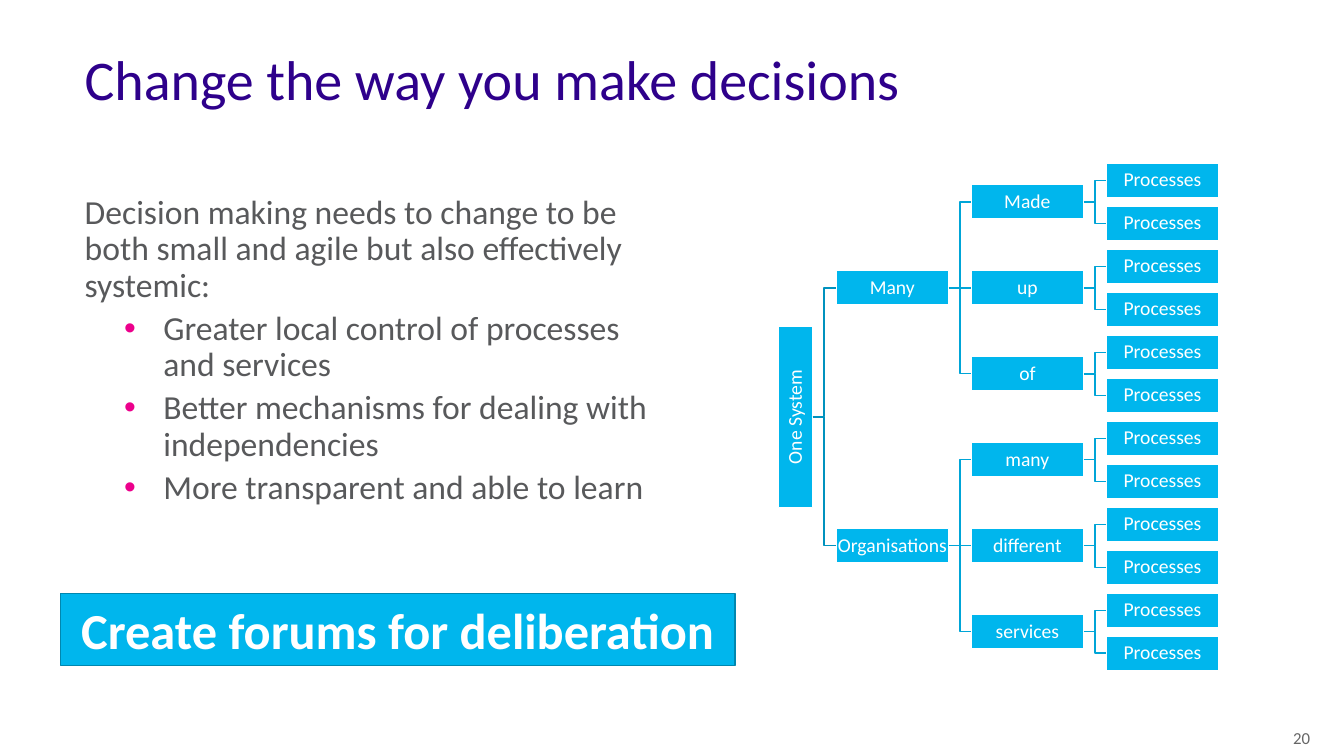
from dataclasses import dataclass
from itertools import count

from lxml.etree import SubElement
from pptx import Presentation
from pptx.dml.color import RGBColor
from pptx.enum.shapes import MSO_CONNECTOR, MSO_SHAPE
from pptx.enum.text import MSO_ANCHOR, PP_ALIGN
from pptx.oxml.ns import qn
from pptx.util import Inches, Pt


@dataclass(frozen=True)
class Theme:
    font: str = "Calibri"
    title: str = "2E008B"
    body: str = "58595B"
    bullet: str = "EC008C"
    number: str = "666666"
    box: str = "00B6ED"
    white: str = "FFFFFF"
    root_link: str = "0092BE"
    link: str = "00A5D7"
    banner_line: str = "0087AF"
    title_size: int = 40
    banner_size: int = 36
    body_size: int = 24
    label_size: int = 14
    number_size: int = 12


THEME = Theme()

BODY_TEXT = "Decision making needs to change to be both small and agile but also effectively systemic:"
BULLETS = [
    "Greater local control of processes and services",
    "Better mechanisms for dealing with independencies",
    "More transparent and able to learn",
]

# Tree: every third-level word has two "Processes" leaves
TREE = {
    "Many": ["Made", "up", "of"],
    "Organisations": ["many", "different", "services"],
}
LEAF = "Processes"
LEAVES_PER_WORD = 2
FIRST_LEAF_Y, LAST_LEAF_Y = 1.79, 6.48
LEAF_COUNT = LEAVES_PER_WORD * sum(len(words) for words in TREE.values())
LEAF_STEP = (LAST_LEAF_Y - FIRST_LEAF_Y) / (LEAF_COUNT - 1)
COLUMN_LEFT, COLUMN_STEP = 8.29, 1.34
BOX_WIDTH, BOX_HEIGHT = 1.12, 0.34
ROOT_WIDTH, ROOT_X = 1.8, 7.89


def write(frame, text, size, color, bold=False, align=PP_ALIGN.LEFT, line_spacing=None,
          before=0, bullet=None, anchor=MSO_ANCHOR.TOP, inset=None, first=True):
    """Put one formatted paragraph into a text frame."""
    if first:
        frame.word_wrap = True
        frame.vertical_anchor = anchor
        if inset is not None:
            frame.margin_left = frame.margin_right = Inches(inset)
            frame.margin_top = frame.margin_bottom = Inches(inset)
    paragraph = frame.paragraphs[0] if first else frame.add_paragraph()
    paragraph.alignment = align
    paragraph.space_before = Pt(before)
    if line_spacing:
        paragraph.line_spacing = line_spacing
    if bullet:
        paragraph.level = 1
        properties = paragraph._p.get_or_add_pPr()
        properties.set("marL", str(Inches(0.78)))
        properties.set("indent", str(Inches(-0.39)))
        bullet_color = SubElement(properties, qn("a:buClr"))
        SubElement(bullet_color, qn("a:srgbClr"), val=bullet)
        SubElement(properties, qn("a:buFont"), typeface="Arial")
        SubElement(properties, qn("a:buChar"), char="•")
    run = paragraph.add_run()
    run.text = text
    run.font.name = THEME.font
    run.font.size = Pt(size)
    run.font.bold = bold
    run.font.color.rgb = RGBColor.from_string(color)


class SlideBuilder:
    def __init__(self, slide, theme):
        self.slide = slide
        self.theme = theme

    def text_box(self, left, top, width, height):
        box = self.slide.shapes.add_textbox(
            Inches(left), Inches(top), Inches(width), Inches(height))
        return box.text_frame

    def rectangle(self, left, top, width, height, line):
        shape = self.slide.shapes.add_shape(
            MSO_SHAPE.RECTANGLE, Inches(left), Inches(top), Inches(width), Inches(height))
        shape.shadow.inherit = False
        shape.fill.solid()
        shape.fill.fore_color.rgb = RGBColor.from_string(self.theme.box)
        self.outline(shape, line)
        return shape

    def outline(self, shape, color):
        shape.line.color.rgb = RGBColor.from_string(color)
        shape.line.width = Pt(1)

    def node(self, text, center_x, center_y, width=BOX_WIDTH, rotation=0):
        shape = self.rectangle(center_x - width / 2, center_y - BOX_HEIGHT / 2,
                               width, BOX_HEIGHT, self.theme.white)
        shape.rotation = rotation
        write(shape.text_frame, text, self.theme.label_size, self.theme.white,
              align=PP_ALIGN.CENTER, line_spacing=0.9, anchor=MSO_ANCHOR.MIDDLE, inset=0.01)
        return shape

    def straight_link(self, parent, child, color):
        connector = self.slide.shapes.add_connector(MSO_CONNECTOR.STRAIGHT, 0, 0, 0, 0)
        connector.begin_connect(parent, 3)
        connector.end_connect(child, 1)
        self.outline(connector, color)
        SubElement(connector._element.spPr, qn("a:effectLst"))

    def elbow_link(self, start_x, start_y, end_x, end_y, color):
        middle_x = (start_x + end_x) / 2
        corners = [(middle_x, start_y), (middle_x, end_y), (end_x, end_y)]
        builder = self.slide.shapes.build_freeform(Inches(start_x), Inches(start_y))
        builder.add_line_segments([(Inches(x), Inches(y)) for x, y in corners], close=False)
        shape = builder.convert_to_shape()
        shape.shadow.inherit = False
        shape.fill.background()
        self.outline(shape, color)

    def branch(self, text, level, children):
        """Draw a box centred on its children, with links; return the box and its centre."""
        center_y = sum(y for _, y in children) / len(children)
        left = COLUMN_LEFT + level * COLUMN_STEP
        parent = self.node(text, left + BOX_WIDTH / 2, center_y)
        for child, y in children:
            if abs(y - center_y) < 0.01:
                self.straight_link(parent, child, self.theme.link)
            else:
                self.elbow_link(left + BOX_WIDTH, center_y, left + COLUMN_STEP, y,
                                self.theme.link)
        return parent, center_y

    def tree(self):
        leaf_x = COLUMN_LEFT + 2 * COLUMN_STEP + BOX_WIDTH / 2
        rows = count()

        def leaf():
            y = FIRST_LEAF_Y + next(rows) * LEAF_STEP
            return self.node(LEAF, leaf_x, y), y

        branches = []
        for name, words in TREE.items():
            children = [self.branch(word, 1, [leaf() for _ in range(LEAVES_PER_WORD)])
                        for word in words]
            branches.append(self.branch(name, 0, children))

        # Upright root box
        root_y = (FIRST_LEAF_Y + LAST_LEAF_Y) / 2
        self.node("One System", ROOT_X, root_y, width=ROOT_WIDTH, rotation=270)
        for _, y in branches:
            self.elbow_link(ROOT_X + BOX_HEIGHT / 2, root_y, COLUMN_LEFT, y,
                            self.theme.root_link)


def main():
    presentation = Presentation()
    presentation.slide_width = Inches(13.33)
    presentation.slide_height = Inches(7.5)
    slide = presentation.slides.add_slide(presentation.slide_layouts[6])
    builder = SlideBuilder(slide, THEME)

    # Title
    write(builder.text_box(0.84, 0.52, 11.66, 0.61), "Change the way you make decisions",
          THEME.title_size, THEME.title, line_spacing=0.9, inset=0)

    # Body text and bullets
    body = builder.text_box(0.84, 1.94, 5.75, 3.62)
    write(body, BODY_TEXT, THEME.body_size, THEME.body, line_spacing=0.9, before=10, inset=0)
    for bullet in BULLETS:
        write(body, bullet, THEME.body_size, THEME.body, line_spacing=0.9, before=5,
              bullet=THEME.bullet, first=False)

    # Page number
    write(builder.text_box(12.49, 7.14, 0.84, 0.36), "20", THEME.number_size, THEME.number,
          align=PP_ALIGN.CENTER, anchor=MSO_ANCHOR.BOTTOM, inset=0.08)

    # Organisation tree
    builder.tree()

    # Banner
    banner = builder.rectangle(0.6, 5.89, 6.69, 0.71, THEME.banner_line)
    write(banner.text_frame, "Create forums for deliberation", THEME.banner_size, THEME.white,
          bold=True, align=PP_ALIGN.CENTER)

    presentation.save("out.pptx")


if __name__ == "__main__":
    main()
